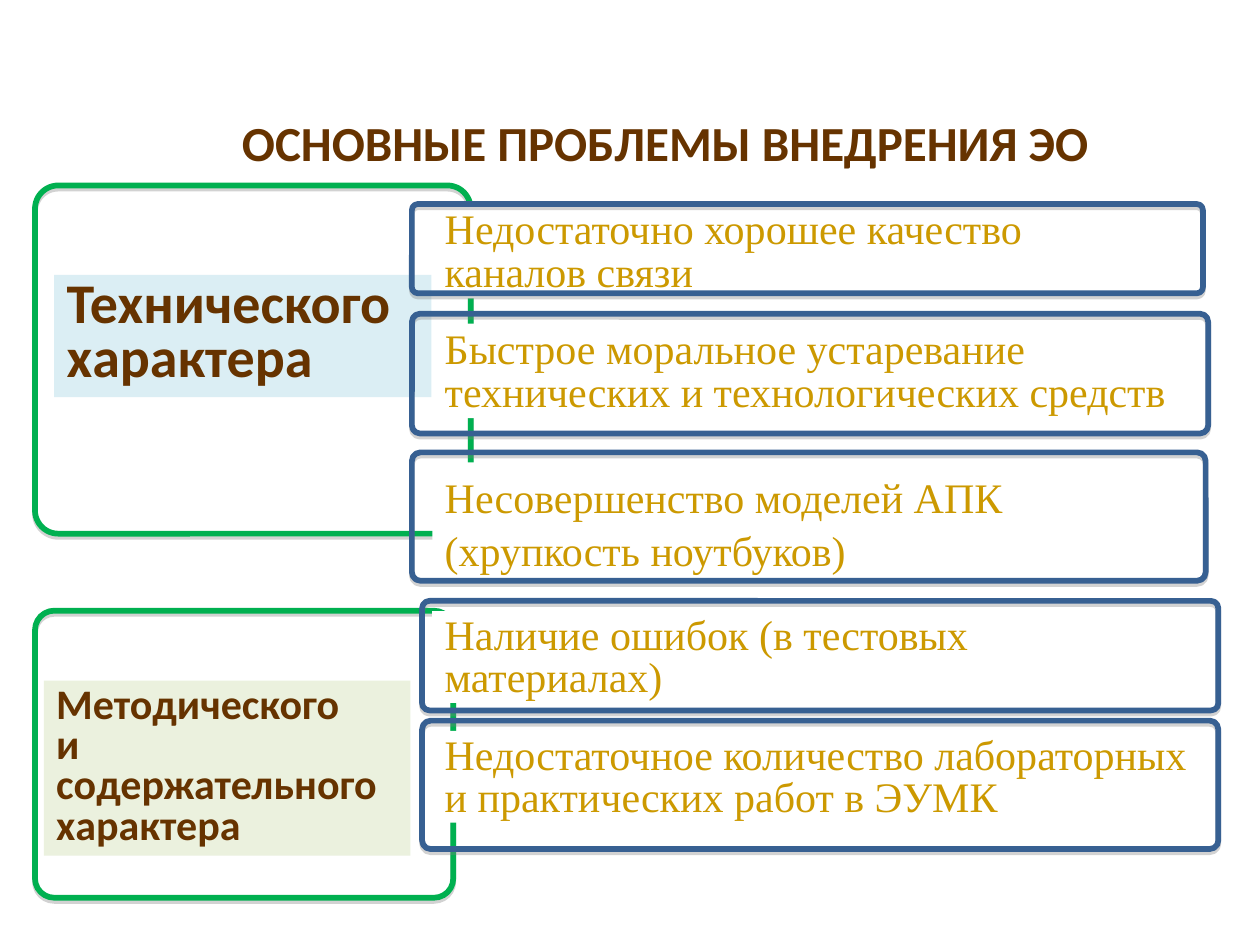
from lxml.etree import fromstring
from pptx import Presentation
from pptx.dml.color import RGBColor
from pptx.enum.shapes import MSO_SHAPE as Shape
from pptx.enum.text import MSO_ANCHOR as Anchor, PP_ALIGN as Align
from pptx.util import Pt

GREEN = RGBColor(0x00, 0xB0, 0x50)
BLUE = RGBColor(0x37, 0x60, 0x92)
BROWN = RGBColor(0x66, 0x33, 0x00)
GOLD = RGBColor(0xCC, 0x99, 0x00)
WHITE = RGBColor(0xFF, 0xFF, 0xFF)
PALE_BLUE = RGBColor(0xDB, 0xEE, 0xF4)
PALE_GREEN = RGBColor(0xEB, 0xF1, 0xDE)

SHADOW = (
    '<a:effectLst xmlns:a="http://schemas.openxmlformats.org/drawingml/2006/main">'
    '<a:outerShdw blurRad="0" dist="22860" dir="5400000" rotWithShape="0">'
    '<a:srgbClr val="808080"><a:alpha val="35000"/></a:srgbClr>'
    '</a:outerShdw></a:effectLst>'
)

presentation = Presentation()
presentation.slide_width, presentation.slide_height = Pt(720), Pt(540)
slide = presentation.slides.add_slide(presentation.slide_layouts[6])


def add_frame(left, top, width, height, color):
    """Rounded outline with a soft drop shadow."""
    shape = slide.shapes.add_shape(
        Shape.ROUNDED_RECTANGLE, Pt(left), Pt(top), Pt(width), Pt(height))
    shape.adjustments[0] = 0.067
    shape.fill.background()
    shape.line.color.rgb = color
    shape.line.width = Pt(3.25)
    shape.shadow.inherit = False
    properties = shape.element.spPr
    properties.replace(properties[-1], fromstring(SHADOW))


def add_text(text, left, top, width, height, fill=None, size=24, font="Calibri",
             color=BROWN, bold=True, align=Align.JUSTIFY, spacing=0.8):
    """Rectangle with text, one paragraph per line."""
    shape = slide.shapes.add_shape(
        Shape.RECTANGLE, Pt(left), Pt(top), Pt(width), Pt(height))
    shape.shadow.inherit = False
    shape.line.fill.background()
    if fill is None:
        shape.fill.background()
    else:
        shape.fill.solid()
        shape.fill.fore_color.rgb = fill
    frame = shape.text_frame
    frame.word_wrap = True
    frame.vertical_anchor = Anchor.TOP
    frame.text = text
    for paragraph in frame.paragraphs:
        paragraph.alignment = align
        paragraph.line_spacing = spacing
        paragraph.font.size = Pt(size)
        paragraph.font.name = font
        paragraph.font.bold = bold
        paragraph.font.color.rgb = color


# Group frames
add_frame(20, 349, 239, 164, GREEN)
add_frame(20, 106, 249, 199, GREEN)

# Title
add_text("ОСНОВНЫЕ ПРОБЛЕМЫ ВНЕДРЕНИЯ ЭО", 20, 60.5, 720, 41,
         size=28, align=Align.CENTER, spacing=1.0)

# Group labels
add_text("Технического характера", 31, 157, 215.5, 70, fill=PALE_BLUE, size=32)
add_text("Методического\nи\nсодержательного характера", 25, 389, 209.5, 100,
         fill=PALE_GREEN)

# Problems: text, text box (top, width, height), line spacing, frame box
problems = [
    ("Недостаточно хорошее качество каналов связи",
     (116.6, 430, 54), 0.85, (235.4, 116.6, 452, 51)),
    ("Быстрое моральное устаревание технических и технологических средств",
     (185, 436, 54), 0.85, (235.4, 179.3, 455, 68.4)),
    ("Несовершенство моделей АПК (хрупкость ноутбуков)",
     (264.2, 436, 65.5), 1.06, (235.4, 258.5, 453.6, 73.4)),
    ("Наличие ошибок (в тестовых материалах)",
     (349.2, 443.5, 52.5), 0.83, (241.2, 343.4, 455, 62.6)),
    ("Недостаточное количество лабораторных и практических работ в ЭУМК",
     (417.6, 443.5, 52.5), 0.83, (241.2, 411.8, 455, 73.4)),
]
for text, text_box, spacing, frame_box in problems:
    add_text(text, 247, *text_box, fill=WHITE, font="Times New Roman",
             color=GOLD, bold=False, align=Align.LEFT, spacing=spacing)
    add_frame(*frame_box, BLUE)

presentation.save("out.pptx")
